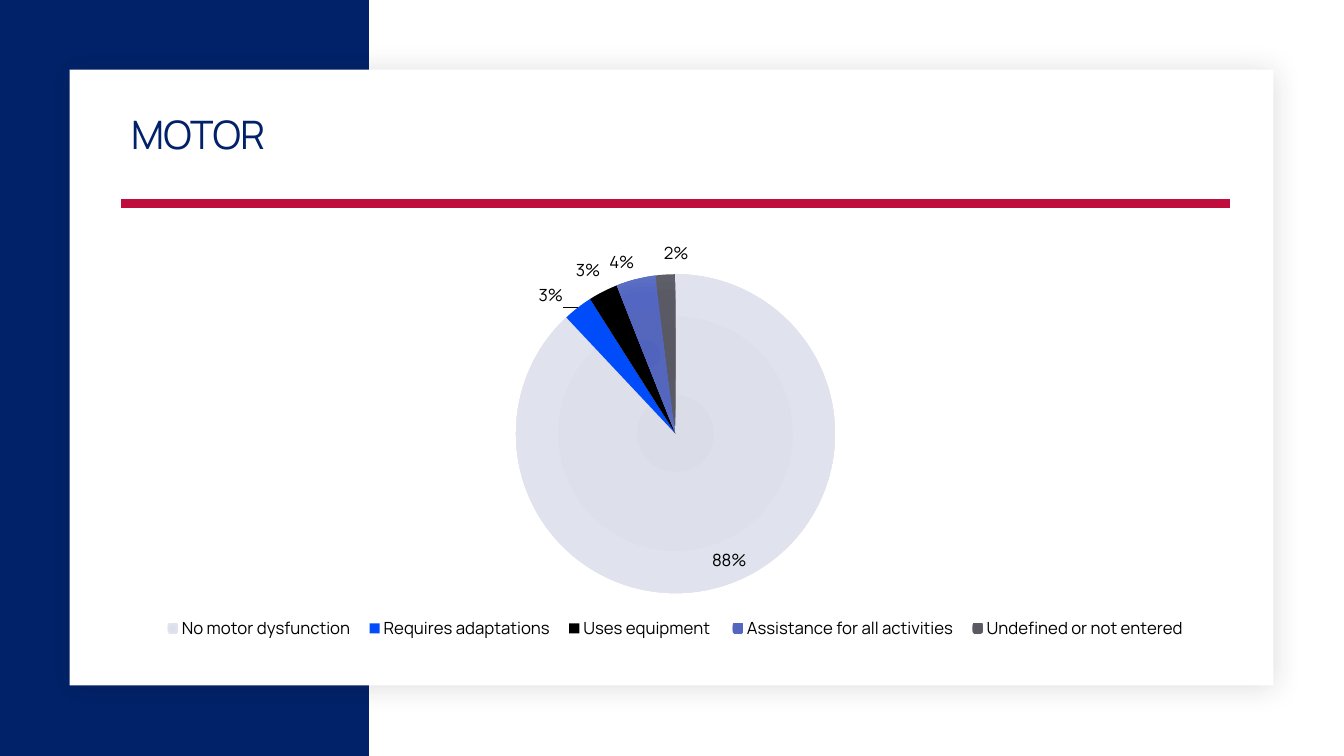
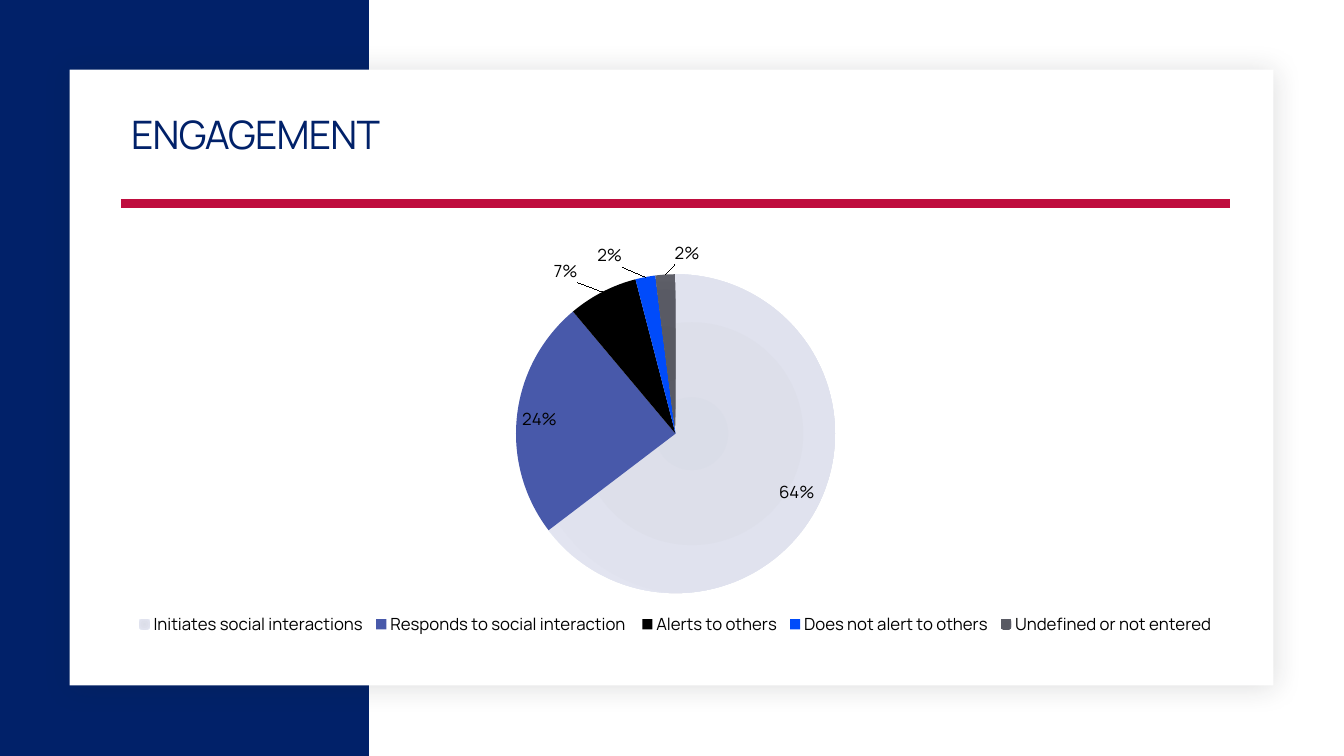
from dataclasses import dataclass

import pptx
import pptx.chart.data
import pptx.dml.color
import pptx.enum.chart
import pptx.enum.shapes
import pptx.enum.text
import pptx.oxml
import pptx.oxml.ns
import pptx.util
from pptx.util import Inches


@dataclass(frozen=True)
class Theme:
    font: str = "Manrope"
    navy: str = "012169"
    red: str = "BF0D3E"
    white: str = "FFFFFF"
    black: str = "000000"
    blue: str = "004BFA"
    indigo: str = "4859AA"
    shadow: str = "1F2125"
    mist: tuple = ("DADDE8", "DDDFEA", "E0E2EE", "EBEEF8")
    violet: tuple = ("5164BD", "5467BD", "5367C2", "6072C2")
    slate: tuple = ("575862", "585962", "595A64", "5E5F68")
    stops: tuple = (0, 34, 70, 100)
    title_size: int = 28
    chart_size: int = 10
    label_size: int = 12


THEME = Theme()
LEFT, WIDTH = 1.2, 11
PIE_BOX = (0.35, 0.1, 0.3, 0.77)

# Title, legend box, then (category, value, fill, label offset) for each slice;
# boxes and offsets are fractions of the chart, None leaves the label to best fit
PIES = [
    ("MOTOR", (0.03, 0.91, 0.94, 0.09), [
        ("No motor dysfunction", 88, THEME.mist, None),
        ("Requires adaptations", 3, THEME.blue, (-0.01, 0.01)),
        ("Uses equipment ", 3, THEME.black, (0, -0.01)),
        ("Assistance for all activities", 4, THEME.violet, (0, 0)),
        ("Undefined or not entered", 2, THEME.slate, (0.01, -0.01)),
    ]),
    ("ENGAGEMENT", (0.01, 0.9, 0.98, 0.09), [
        ("Initiates social interactions", 64, THEME.mist, None),
        ("Responds to social interaction ", 24, THEME.indigo, None),
        ("Alerts to others", 7, THEME.black, (-0.02, -0.01)),
        ("Does not alert to others", 2, THEME.blue, (-0.02, -0.01)),
        ("Undefined or not entered", 2, THEME.slate, (0.02, -0.01)),
    ]),
]


def rgb(color):
    return pptx.dml.color.RGBColor.from_string(color)


def xml(text):
    """Parse a fragment whose root tag carries the {ns} mark."""
    return pptx.oxml.parse_xml(text.replace("{ns}", pptx.oxml.ns.nsdecls("a", "c")))


def style_font(font, size, color=THEME.black):
    font.name = THEME.font
    font.size = pptx.util.Pt(size)
    font.color.rgb = rgb(color)


def add_block(page, left, top, width, height, color):
    block = page.shapes.add_shape(
        pptx.enum.shapes.MSO_SHAPE.RECTANGLE,
        Inches(left), Inches(top), Inches(width), Inches(height))
    block.shadow.inherit = False
    block.fill.solid()
    block.fill.fore_color.rgb = rgb(color)
    block.line.fill.background()
    return block


def add_soft_shadow(block):
    effects = block.element.spPr.find(pptx.oxml.ns.qn("a:effectLst"))
    effects.append(xml(
        f'<a:outerShdw {{ns}} blurRad="{pptx.util.Pt(20)}" dist="{pptx.util.Pt(2)}"'
        f' dir="2700000" algn="tl" rotWithShape="0"><a:srgbClr val="{THEME.shadow}">'
        '<a:alpha val="15000"/></a:srgbClr></a:outerShdw>'))


def add_rule(page, top):
    rule = page.shapes.add_connector(
        pptx.enum.shapes.MSO_CONNECTOR.STRAIGHT,
        Inches(LEFT), Inches(top), Inches(LEFT + WIDTH), Inches(top))
    rule.line.color.rgb = rgb(THEME.red)
    rule.line.width = pptx.util.Pt(6)
    rule.element.spPr.append(xml("<a:effectLst {ns}/>"))


def add_frame(page):
    """Navy band, white card and red rule that every slide shares."""
    add_block(page, 0, 0, 3.66, 7.5, THEME.navy)
    add_soft_shadow(add_block(page, 0.69, 0.69, 11.94, 6.11, THEME.white))
    add_rule(page, 2.02)


def set_title(page, text):
    title = page.shapes.title
    page.shapes.element.append(title.element)  # in front of the card
    title.left, title.top = Inches(LEFT), Inches(1.04)
    title.width, title.height = Inches(WIDTH), Inches(0.64)
    title.text_frame.vertical_anchor = pptx.enum.text.MSO_ANCHOR.MIDDLE
    para = title.text_frame.paragraphs[0]
    para.alignment = pptx.enum.text.PP_ALIGN.LEFT
    para.line_spacing = 0.9
    span = para.add_run()
    span.text = text
    style_font(span.font, THEME.title_size, THEME.navy)
    title.element.xpath(".//a:rPr")[0].set("spc", "-50")


def fill_slice(chart, index, fill):
    """Paint one slice with a plain colour or a tuple of gradient colours."""
    area = chart.plots[0].series[0].points[index].format.fill
    if isinstance(fill, str):
        area.solid()
        area.fore_color.rgb = rgb(fill)
        return
    area.gradient()
    stops = "".join(
        f'<a:gs pos="{stop * 1000}"><a:srgbClr val="{color}"/></a:gs>'
        for stop, color in zip(THEME.stops, fill))
    plain = chart.element.xpath(f'.//c:dPt[c:idx/@val="{index}"]//a:gradFill')[0]
    plain.getparent().replace(plain, xml(
        f'<a:gradFill {{ns}}><a:gsLst>{stops}</a:gsLst><a:path path="circle">'
        '<a:fillToRect l="100000" t="100000" r="100000" b="100000"/>'
        '</a:path></a:gradFill>'))


def set_layout(parent, position, settings):
    """Give a chart part a manual layout as its child at the given position."""
    for layout in parent.xpath("./c:layout"):
        parent.remove(layout)
    values = "".join(f'<c:{key} val="{value}"/>' for key, value in settings)
    parent.insert(position, xml(
        f'<c:layout {{ns}}><c:manualLayout>{values}</c:manualLayout></c:layout>'))


def box_settings(box):
    return [("xMode", "edge"), ("yMode", "edge"), *zip("xywh", box)]


def show_percent(labels_element):
    for tag, value in (("showVal", "0"), ("showPercent", "1")):
        labels_element.xpath(f"./c:{tag}")[0].set("val", value)


def style_labels(chart, values, offsets):
    series = chart.plots[0].series[0]
    labels = series.data_labels
    labels.show_value = False
    labels.show_percentage = True
    labels.number_format = "0%"
    labels.number_format_is_linked = False
    labels.position = pptx.enum.chart.XL_LABEL_POSITION.BEST_FIT
    style_font(labels.font, THEME.label_size)
    for index, (value, offset) in enumerate(zip(values, offsets)):
        label = series.points[index].data_label
        if offset is not None:
            style_font(label.font, THEME.label_size)
            label.position = pptx.enum.chart.XL_LABEL_POSITION.OUTSIDE_END
            element = chart.element.xpath(f'.//c:dLbl[c:idx/@val="{index}"]')[0]
            show_percent(element)
            set_layout(element, 1, zip("xy", offset))
        elif round(100 * value / sum(values)) != value:
            # rounded values do not add up to 100, so state the share
            span = label.text_frame.paragraphs[0].add_run()
            span.text = f"{value}%"
            style_font(span.font, THEME.label_size)
            label.position = pptx.enum.chart.XL_LABEL_POSITION.BEST_FIT
            show_percent(chart.element.xpath(f'.//c:dLbl[c:idx/@val="{index}"]')[0])


def add_pie(page, legend_box, slices):
    names, values, fills, offsets = zip(*slices)
    data = pptx.chart.data.CategoryChartData()
    data.categories = names
    data.add_series("Series 1", values)
    chart = page.shapes.add_chart(
        pptx.enum.chart.XL_CHART_TYPE.PIE,
        Inches(LEFT), Inches(2.31), Inches(WIDTH), Inches(4.11), data).chart
    chart.has_title = False
    style_font(chart.font, THEME.chart_size)
    chart.has_legend = True
    chart.legend.position = pptx.enum.chart.XL_LEGEND_POSITION.BOTTOM
    chart.legend.include_in_layout = False
    style_font(chart.legend.font, THEME.label_size)
    set_layout(chart.element.xpath(".//c:legend")[0], 1, box_settings(legend_box))
    set_layout(chart.element.xpath(".//c:plotArea")[0], 0,
               [("layoutTarget", "inner"), *box_settings(PIE_BOX)])
    chart.plots[0].vary_by_categories = True
    for index, fill in enumerate(fills):
        fill_slice(chart, index, fill)
    style_labels(chart, values, offsets)


def main():
    deck = pptx.Presentation()
    deck.slide_width, deck.slide_height = Inches(13.33), Inches(7.5)
    title_only = deck.slide_layouts[5]
    for title, legend_box, slices in PIES:
        page = deck.slides.add_slide(title_only)
        add_frame(page)
        set_title(page, title)
        add_pie(page, legend_box, slices)
    deck.save("out.pptx")


if __name__ == "__main__":
    main()
